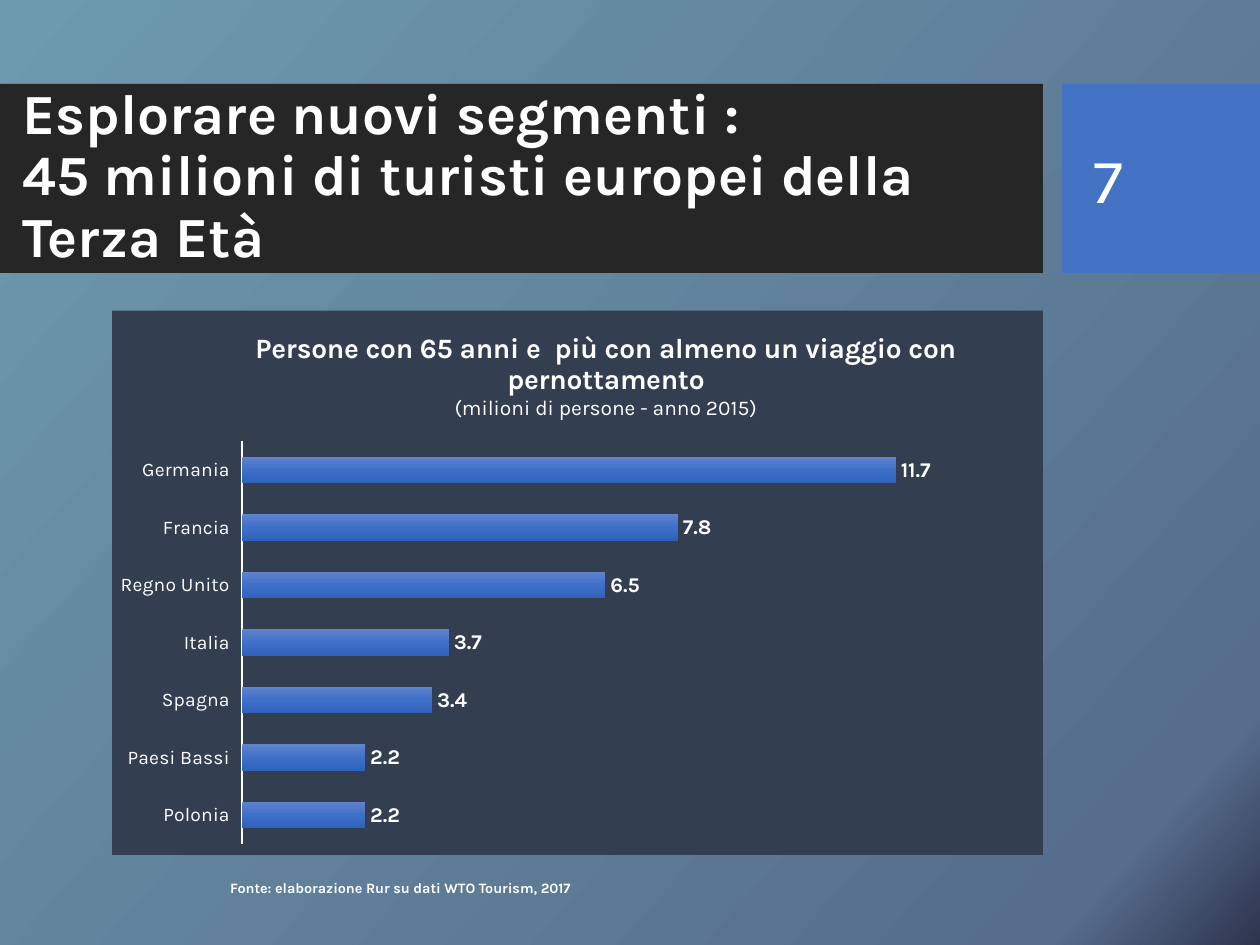
from lxml import etree
from pptx import Presentation
from pptx.chart.data import CategoryChartData as Data
from pptx.dml.color import RGBColor as RGB
from pptx.enum.chart import XL_CHART_TYPE as Kind, XL_LABEL_POSITION as Pos
from pptx.enum.chart import XL_TICK_LABEL_POSITION as Tick, XL_TICK_MARK as Mark
from pptx.enum.shapes import MSO_SHAPE as Form
from pptx.enum.text import MSO_ANCHOR as Anchor
from pptx.oxml import parse_xml
from pptx.oxml.ns import nsdecls, qn
from pptx.util import Pt

FONT = "Karla"
HUES = {"white": "FFFFFF", "black": "262626", "blue": "4472C4", "panel": "333F50"}
SKY = [(0, "6D9AAE"), (90, "566D8C"), (100, "2E344E")]
BAR = [(0, "6183CB"), (50, "3E70CA"), (100, "3062BB")]


def style(font, size, bold=False):
    font.name = FONT
    font.size = Pt(size)
    font.bold = bold
    font.color.rgb = RGB.from_string(HUES["white"])


def shade(fill, root, stops, angle):
    fill.gradient()
    fill.gradient_angle = angle
    node = root.find(".//" + qn("a:gsLst"))
    for old in list(node):
        node.remove(old)
    for spot, hue in stops:
        stop = etree.SubElement(node, qn("a:gs"), pos=str(spot * 1000))
        etree.SubElement(stop, qn("a:srgbClr"), val=hue)


deck = Presentation()
deck.slide_width, deck.slide_height = Pt(720), Pt(540)
slide = deck.slides.add_slide(deck.slide_layouts[6])
shade(slide.background.fill, slide.element, SKY, 318)

for left, width, hue in [(0, 596, "black"), (607, 113, "blue")]:
    band = slide.shapes.add_shape(Form.RECTANGLE, Pt(left), Pt(48), Pt(width), Pt(108))
    band.shadow.inherit = False
    band.fill.solid()
    band.fill.fore_color.rgb = RGB.from_string(HUES[hue])
    band.line.fill.background()

texts = [
    ("Esplorare nuovi segmenti :\v45 milioni di turisti europei della Terza Età",
     (5.8, 59, 579, 85), 32.4, True, Anchor.MIDDLE, 0.9),
    ("7", (618, 59, 91, 86), 36, False, Anchor.MIDDLE, 1),
    ("Fonte: elaborazione Rur su dati WTO Tourism, 2017",
     (124.5, 499, 413, 17), 8.2, True, Anchor.TOP, 1),
]
for words, spot, size, bold, anchor, pitch in texts:
    box = slide.shapes.add_textbox(*map(Pt, spot))
    frame = box.text_frame
    frame.word_wrap = True
    frame.vertical_anchor = anchor
    frame.text = words
    para = frame.paragraphs[0]
    para.line_spacing = pitch
    for run in para.runs:
        style(run.font, size, bold)

data = Data()
data.categories = ["Polonia", "Paesi Bassi", "Spagna", "Italia",
                   "Regno Unito", "Francia", "Germania"]
data.add_series("Series 1", [2.2, 2.2, 3.4, 3.7, 6.5, 7.8, 11.7])
chart = slide.shapes.add_chart(
    Kind.BAR_CLUSTERED, Pt(64), Pt(177.5), Pt(532), Pt(311), data).chart
root = chart._chartSpace.chart
style(chart.font, 10)
chart.has_legend = False
root.addnext(parse_xml(
    f'<c:spPr {nsdecls("c", "a")}><a:solidFill><a:srgbClr val="{HUES["panel"]}"/>'
    '</a:solidFill><a:ln><a:noFill/></a:ln></c:spPr>'))

chart.has_title = True
head = chart.chart_title.text_frame
head.text = "Persone con 65 anni e  più con almeno un viaggio con pernottamento"
head.add_paragraph().text = "(milioni di persone - anno 2015)"
for para, size, bold in zip(head.paragraphs, (16, 12), (True, False)):
    style(para.runs[0].font, size, bold)
chart.chart_title.include_in_layout = False

cats = chart.category_axis
cats.major_tick_mark = cats.minor_tick_mark = Mark.NONE
cats.tick_label_position = Tick.LOW
style(cats.tick_labels.font, 11)
cats.format.line.color.rgb = RGB.from_string(HUES["white"])
cats.format.line.width = Pt(1)
axis = chart.value_axis
axis.visible = axis.has_major_gridlines = False
axis.minimum_scale, axis.maximum_scale = 0, 14

plot = chart.plots[0]
plot.gap_width, plot.overlap = 115, -20
plot.vary_by_categories = False
bars = plot.series[0]
shade(bars.format.fill, bars._element, BAR, 270)
plot.has_data_labels = True
tags = plot.data_labels
tags.show_value = True
tags.position = Pos.OUTSIDE_END
tags.number_format, tags.number_format_is_linked = "0.0", False
style(tags.font, 12, True)

spots = [
    (root.find(qn("c:title")), {"x": 0.15, "y": 0.03}),
    (root.plotArea, {"x": 0.14, "y": 0.24, "w": 0.84, "h": 0.74}),
]
for part, sizes in spots:
    for old in part.findall(qn("c:layout")):
        part.remove(old)
    goal = '<c:layoutTarget val="inner"/>' if "w" in sizes else ""
    modes = "".join(f'<c:{key}Mode val="edge"/>' for key in "xy")
    vals = "".join(f'<c:{key} val="{val}"/>' for key, val in sizes.items())
    node = parse_xml(f'<c:layout {nsdecls("c")}><c:manualLayout>{goal}{modes}{vals}'
                     '</c:manualLayout></c:layout>')
    text = part.find(qn("c:tx"))
    if text is None:
        part.insert(0, node)
    else:
        text.addnext(node)

deck.save("out.pptx")
